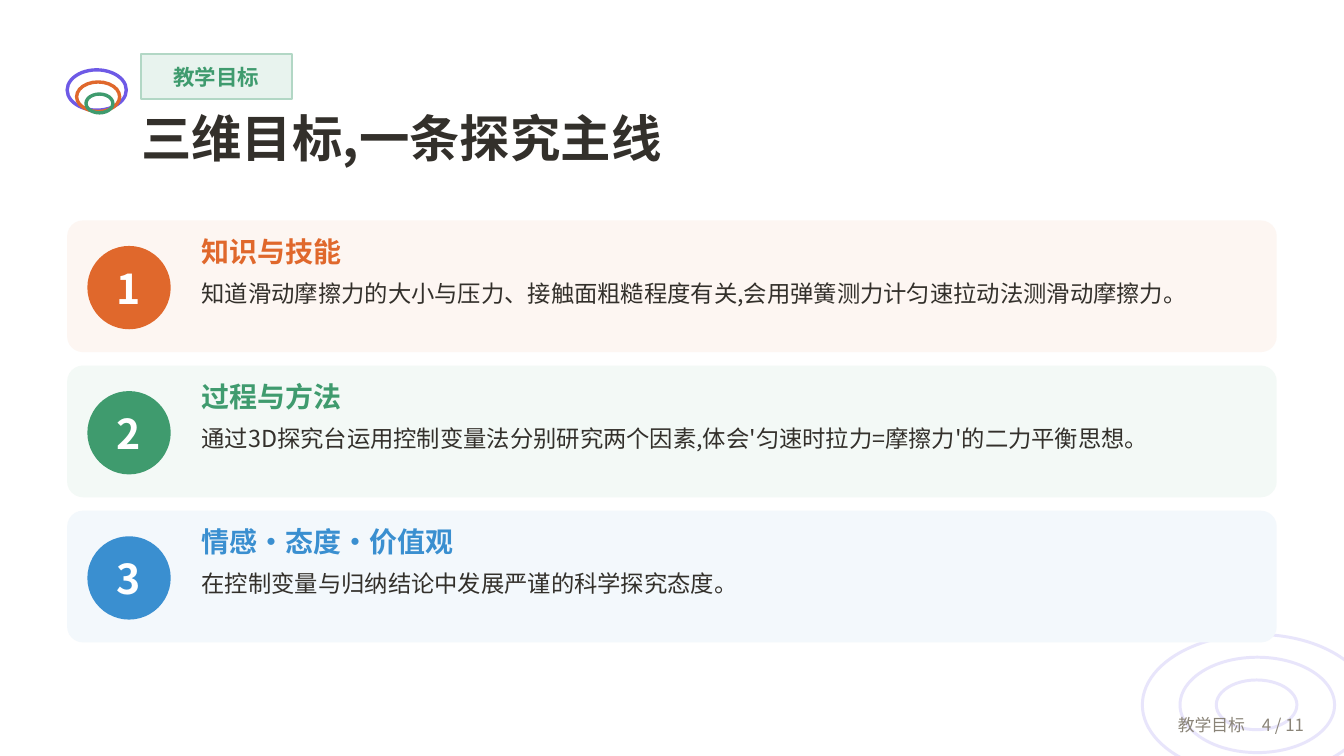
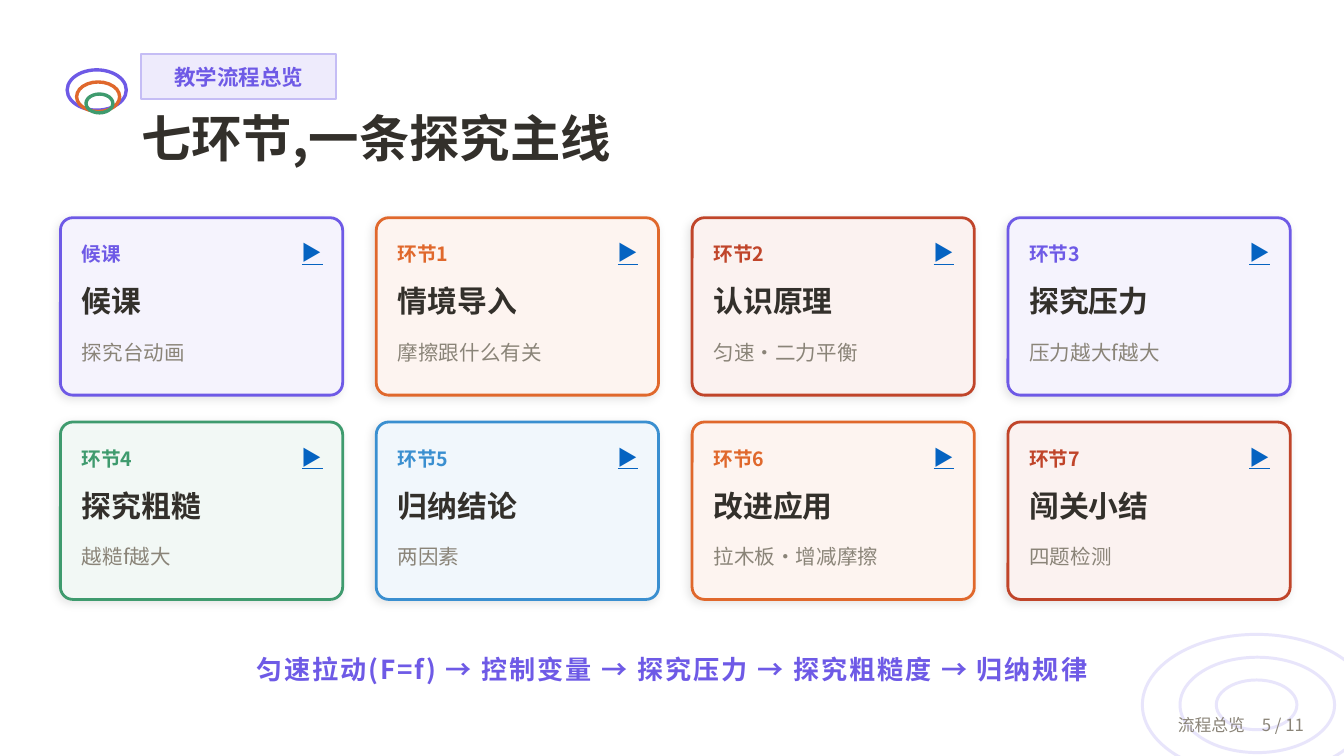
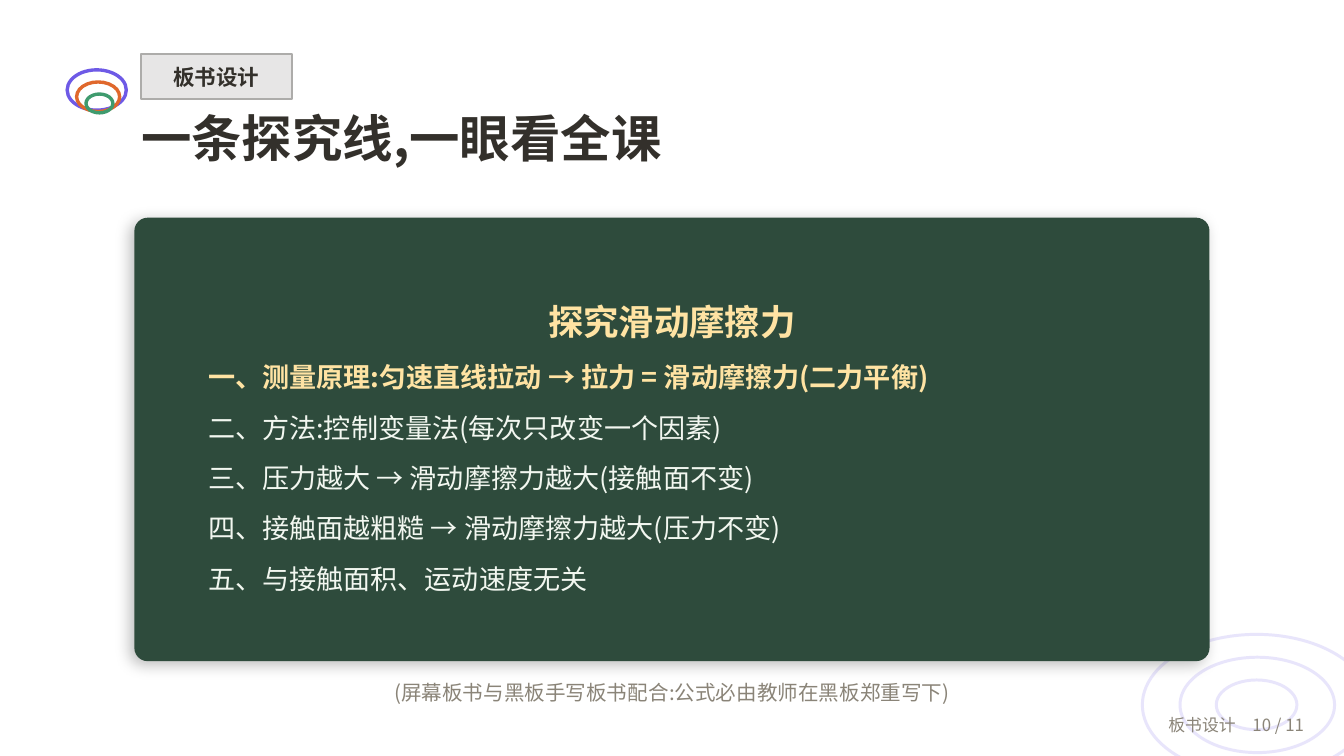
"""Build three lesson slides on sliding friction: goals, lesson flow and board design."""
from lxml.etree import SubElement
from pptx import Presentation
from pptx.dml.color import RGBColor
from pptx.enum.shapes import MSO_SHAPE
from pptx.enum.text import MSO_ANCHOR, PP_ALIGN
from pptx.oxml.ns import qn
from pptx.util import Pt

FONT = "Noto Sans CJK SC"
COLORS = {
    "ink": "33302B", "muted": "8A8478", "white": "FFFFFF", "link": "0563C1",
    "purple": "6E5AE6", "orange": "E0682C", "green": "3F9B6E",
    "blue": "3A8FD0", "red": "C0452A", "ring": "E8E5FB",
    "green_tag": "E8F3EE", "green_edge": "B2D7C5",
    "purple_tag": "EEEBFC", "purple_edge": "C5BDF5",
    "ink_tag": "E7E6E6", "ink_edge": "ADACAA",
    "orange_band": "FDF6F2", "green_band": "F3F9F6", "blue_band": "F3F8FC",
    "purple_card": "F5F3FD", "orange_card": "FDF4F0", "red_card": "FBF2F0",
    "green_card": "F2F8F5", "blue_card": "F1F7FC",
    "board": "2E4B3C", "chalk": "F2F7F0", "chalk_yellow": "FFE3A3",
}


def add_box(slide, kind, box, fill=None, line=None, line_width=1, radius=None, shadow=None):
    """Add a preset shape; shadow is (opacity percent, blur, distance)."""
    shape = slide.shapes.add_shape(kind, *[Pt(length) for length in box])
    shape.shadow.inherit = False
    if fill:
        shape.fill.solid()
        shape.fill.fore_color.rgb = RGBColor.from_string(COLORS[fill])
    else:
        shape.fill.background()
    if line:
        shape.line.color.rgb = RGBColor.from_string(COLORS[line])
        shape.line.width = Pt(line_width)
    else:
        shape.line.fill.background()
    if radius:
        shape.adjustments[0] = radius
    if shadow:
        opacity, blur, distance = shadow
        effects = shape._element.spPr.find(qn("a:effectLst"))
        outer = SubElement(effects, qn("a:outerShdw"), blurRad=str(Pt(blur)),
                           dist=str(Pt(distance)), dir="8100000", algn="bl", rotWithShape="0")
        color = SubElement(outer, qn("a:srgbClr"), val="000000")
        SubElement(color, qn("a:alpha"), val=str(opacity * 1000))
    return shape


def add_text(slide, place, lines, align=PP_ALIGN.LEFT, anchor=MSO_ANCHOR.MIDDLE,
             inset=(0, 0), spacing=None):
    """Write (text, size, color, bold) lines into a shape or a new text box."""
    if isinstance(place, tuple):
        place = slide.shapes.add_textbox(*[Pt(length) for length in place])
    frame = place.text_frame
    frame.word_wrap = True
    frame.vertical_anchor = anchor
    frame.margin_left = frame.margin_right = Pt(inset[0])
    frame.margin_top = frame.margin_bottom = Pt(inset[1])
    for index, (text, size, color, bold) in enumerate(lines):
        paragraph = frame.add_paragraph() if index else frame.paragraphs[0]
        paragraph.alignment = align
        if spacing:
            paragraph.line_spacing = Pt(spacing)
        run = paragraph.add_run()
        run.text = text
        run.font.name = FONT
        run.font.size = Pt(size)
        run.font.bold = bold
        run.font.color.rgb = RGBColor.from_string(COLORS[color])
        SubElement(run._r.get_or_add_rPr(), qn("a:ea"), typeface=FONT)
    return frame


presentation = Presentation()
presentation.slide_width = Pt(720)
presentation.slide_height = Pt(405)

INSET = (7.2, 3.6)
RINGS = [
    ((612, 339.84, 122.4, 75.6), "ring", 1.6),
    ((632.16, 352.08, 82.8, 51.12), "ring", 1.6),
    ((651.6, 364.32, 43.2, 26.64), "ring", 1.6),
    ((36, 37.44, 31.68, 21.6), "purple", 1.8),
    ((41.04, 43.92, 23.04, 15.84), "orange", 1.8),
    ((46.08, 50.4, 14.4, 10.08), "green", 1.8),
]
PAGES = [
    ("教学目标", 80.64, "green", "三维目标,一条探究主线", "教学目标　4 / 11"),
    ("教学流程总览", 104.4, "purple", "七环节,一条探究主线", "流程总览　5 / 11"),
    ("板书设计", 80.64, "ink", "一条探究线,一眼看全课", "板书设计　10 / 11"),
]
slides = []
for tag, tag_width, color, title, footer in PAGES:
    slide = presentation.slides.add_slide(presentation.slide_layouts[6])
    slides.append(slide)
    for box, ring_color, ring_width in RINGS:
        add_box(slide, MSO_SHAPE.OVAL, box, line=ring_color, line_width=ring_width)
    tag_shape = add_box(slide, MSO_SHAPE.RECTANGLE, (75.6, 28.8, tag_width, 24.48),
                        f"{color}_tag", f"{color}_edge")
    add_text(slide, tag_shape, [(tag, 11.5, color, True)], PP_ALIGN.CENTER)
    add_text(slide, (75.6, 57.6, 604.8, 39.6), [(title, 27, "ink", True)], anchor=MSO_ANCHOR.TOP)
goals_slide, flow_slide, board_slide = slides

GOALS = [
    ("orange", "知识与技能",
     "知道滑动摩擦力的大小与压力、接触面粗糙程度有关,会用弹簧测力计匀速拉动法测滑动摩擦力。"),
    ("green", "过程与方法",
     "通过3D探究台运用控制变量法分别研究两个因素,体会'匀速时拉力=摩擦力'的二力平衡思想。"),
    ("blue", "情感·态度·价值观", "在控制变量与归纳结论中发展严谨的科学探究态度。"),
]
for index, (color, heading, detail) in enumerate(GOALS):
    top = 118.08 + 77.76 * index
    add_box(goals_slide, MSO_SHAPE.ROUNDED_RECTANGLE, (36, top, 648, 70.56),
            f"{color}_band", radius=0.12)
    badge = add_box(goals_slide, MSO_SHAPE.OVAL, (46.8, top + 13.68, 44.64, 44.64), color)
    add_text(goals_slide, badge, [(str(index + 1), 22, "white", True)], PP_ALIGN.CENTER)
    add_text(goals_slide, (108, top + 4.32, 565.2, 68.4),
             [(heading, 15, color, True), (detail, 12.5, "ink", False)],
             anchor=MSO_ANCHOR.TOP, spacing=21)

STEPS = [
    ("purple", "候课", "候课", "探究台动画"),
    ("orange", "环节1", "情境导入", "摩擦跟什么有关"),
    ("red", "环节2", "认识原理", "匀速·二力平衡"),
    ("purple", "环节3", "探究压力", "压力越大f越大"),
    ("green", "环节4", "探究粗糙", "越糙f越大"),
    ("blue", "环节5", "归纳结论", "两因素"),
    ("orange", "环节6", "改进应用", "拉木板·增减摩擦"),
    ("red", "环节7", "闯关小结", "四题检测"),
]
for index, (color, label, name, note) in enumerate(STEPS):
    row, column = divmod(index, 4)
    left, top = 32.4 + 169.2 * column, 116.64 + 109.44 * row
    text_left = left + 11.52
    add_box(flow_slide, MSO_SHAPE.ROUNDED_RECTANGLE, (left, top, 151.2, 95.04),
            f"{color}_card", color, 1.5, radius=0.07, shadow=(10, 5, 2))
    add_text(flow_slide, (text_left, top + 8.64, 86.4, 21.6), [(label, 10.5, color, True)])
    play = add_text(flow_slide, (left + 111.6, top + 7.2, 28.8, 23.04),
                    [("▶", 11, "link", False)], PP_ALIGN.RIGHT)
    play.paragraphs[0].runs[0].font.underline = True
    add_text(flow_slide, (text_left, top + 30.24, 129.6, 28.8), [(name, 16, "ink", True)])
    add_text(flow_slide, (text_left, top + 61.2, 129.6, 21.6), [(note, 11, "muted", False)])

summary = add_text(flow_slide, (36, 344.16, 648, 28.8),
                   [("匀速拉动(F=f) → 控制变量 → 探究压力 → 探究粗糙度 → 归纳规律", 14, "purple", True)],
                   PP_ALIGN.CENTER, inset=INSET)
summary.paragraphs[0].runs[0]._r.get_or_add_rPr().set("spc", "100")

BOARD_LINES = [
    ("探究滑动摩擦力", 19, "chalk_yellow", True),
    ("一、测量原理:匀速直线拉动 → 拉力 = 滑动摩擦力(二力平衡)", 14.5, "chalk_yellow", True),
    ("二、方法:控制变量法(每次只改变一个因素)", 14.5, "chalk", False),
    ("三、压力越大 → 滑动摩擦力越大(接触面不变)", 14.5, "chalk", False),
    ("四、接触面越粗糙 → 滑动摩擦力越大(压力不变)", 14.5, "chalk", False),
    ("五、与接触面积、运动速度无关", 14.5, "chalk", False),
]
add_box(board_slide, MSO_SHAPE.ROUNDED_RECTANGLE, (72, 116.64, 576, 237.6),
        "board", radius=0.03, shadow=(25, 8, 3))
board_text = add_text(board_slide, (104.4, 133.2, 511.2, 208.8), BOARD_LINES,
                      inset=INSET, spacing=27)
board_text.paragraphs[0].alignment = PP_ALIGN.CENTER
add_text(board_slide, (72, 360, 576, 21.6),
         [("(屏幕板书与黑板手写板书配合:公式必由教师在黑板郑重写下)", 11, "muted", False)],
         PP_ALIGN.CENTER, inset=INSET)

for slide, (*_, footer) in zip(slides, PAGES):
    add_text(slide, (576, 377.28, 129.6, 21.6), [(footer, 9, "muted", False)],
             PP_ALIGN.RIGHT, inset=INSET)

presentation.save("out.pptx")
